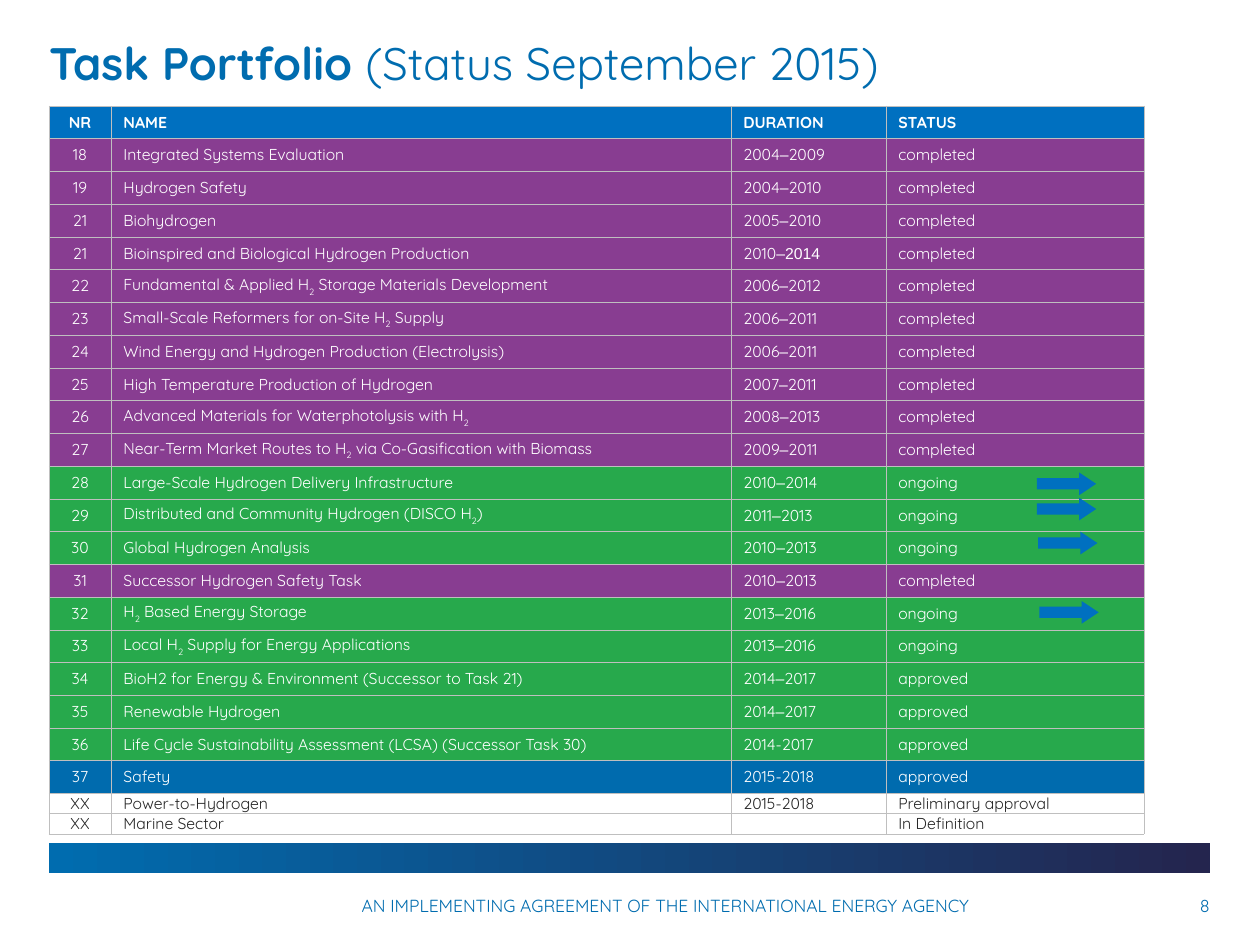
import pptx
import pptx.dml.color
import pptx.enum.shapes
import pptx.enum.text
import pptx.oxml.ns
import pptx.util
from dataclasses import dataclass
from lxml import etree

Inches, Pt = pptx.util.Inches, pptx.util.Pt
ALIGN = pptx.enum.text.PP_ALIGN
SHAPE = pptx.enum.shapes.MSO_SHAPE
qn = pptx.oxml.ns.qn


@dataclass(frozen=True)
class Theme:
    font: str = "Quicksand"
    dash_font: str = "Arial"
    brand: str = "006CAF"
    navy: str = "24254E"
    blue: str = "0070C0"
    purple: str = "883D91"
    green: str = "27A94C"
    safety: str = "006BAE"
    white: str = "FFFFFF"
    ink: str = "262626"
    border: str = "BFBFBF"
    title_size: int = 26
    table_size: int = 9
    footer_size: int = 10


T = Theme()

# In cell text, _ encloses a subscript and | encloses the dash font.
HEADER = ("NR", "NAME", "DURATION", "STATUS")
TASKS = [
    ("18", "Integrated Systems Evaluation", "2004|‒|2009", "completed"),
    ("19", "Hydrogen Safety", "2004|‒|2010", "completed"),
    ("21", "Biohydrogen", "2005|‒|2010", "completed"),
    ("21", "Bioinspired and Biological Hydrogen Production", "2010|‒2014|", "completed"),
    ("22", "Fundamental & Applied H_2_ Storage Materials Development", "2006|‒|2012", "completed"),
    ("23", "Small-Scale Reformers for on-Site H_2_ Supply", "2006|‒|2011", "completed"),
    ("24", "Wind Energy and Hydrogen Production (Electrolysis)", "2006|‒|2011", "completed"),
    ("25", "High Temperature Production of Hydrogen", "2007|‒|2011", "completed"),
    ("26", "Advanced Materials for Waterphotolysis with H_2_", "2008|‒|2013", "completed"),
    ("27", "Near-Term Market Routes to H_2_ via Co-Gasification with Biomass", "2009|‒|2011", "completed"),
    ("28", "Large-Scale Hydrogen Delivery Infrastructure", "2010|‒|2014", "ongoing"),
    ("29", "Distributed and Community Hydrogen (DISCO H_2_)", "2011|‒|2013", "ongoing"),
    ("30", "Global Hydrogen Analysis", "2010|‒|2013", "ongoing"),
    ("31", "Successor Hydrogen Safety Task", "2010|‒|2013", "completed"),
    ("32", "H_2_ Based Energy Storage", "2013|‒|2016", "ongoing"),
    ("33", "Local H_2_ Supply for Energy Applications", "2013|‒|2016", "ongoing"),
    ("34", "BioH2 for Energy & Environment (Successor to Task 21)", "2014|‒|2017", "approved"),
    ("35", "Renewable Hydrogen", "2014|‒|2017", "approved"),
    ("36", "Life Cycle Sustainability Assessment (LCSA) (Successor Task 30)", "2014-2017", "approved"),
    ("37", "Safety", "2015-2018", "approved"),
    ("XX", "Power-to-Hydrogen", "2015-2018", "Preliminary approval"),
    ("XX", "Marine Sector", "", "In Definition"),
]


def rgb(value):
    return pptx.dml.color.RGBColor.from_string(value)


def style(p, size, color, align=ALIGN.LEFT):
    p.alignment = align
    p.font.name, p.font.size = T.font, Pt(size)
    p.font.color.rgb = rgb(color)


def add_text(s, left, top, width, height, size, parts, align=ALIGN.LEFT):
    """Place one line made of (text, bold) parts."""
    tf = s.shapes.add_textbox(*map(Inches, (left, top, width, height))).text_frame
    tf.word_wrap = True
    tf.margin_left = tf.margin_right = tf.margin_top = tf.margin_bottom = 0
    p = tf.paragraphs[0]
    style(p, size, T.brand, align)
    for text, bold in parts:
        r = p.add_run()
        r.text, r.font.bold = text, bold


def add_marked_runs(p, text):
    for i, piece in enumerate(text.split("|")):
        for j, part in enumerate(piece.split("_")):
            if not part:
                continue
            r = p.add_run()
            r.text = part
            if i % 2:
                r.font.name = T.dash_font
            if j % 2:
                r._r.get_or_add_rPr().set("baseline", "-30000")


def add_borders(cell):
    """Draw the four cell borders ahead of the cell fill."""
    tc_pr = cell._tc.get_or_add_tcPr()
    for i, side in enumerate(("lnL", "lnR", "lnT", "lnB")):
        ln = etree.Element(qn(f"a:{side}"), w=str(Pt(0.25)))
        fill = etree.SubElement(ln, qn("a:solidFill"))
        etree.SubElement(fill, qn("a:srgbClr"), val=T.border)
        tc_pr.insert(i, ln)


def row_colors(task):
    """Return the fill and text colour that suit a task's number and status."""
    if task == HEADER:
        return T.blue, T.white
    number, _, _, status = task
    if number == "XX":
        return T.white, T.ink
    if number == "37":
        return T.safety, T.white
    return (T.purple if status == "completed" else T.green), T.white


def fill_cell(cell, text, fill, color, align, bold):
    cell.fill.solid()
    cell.fill.fore_color.rgb = rgb(fill)
    add_borders(cell)
    cell.margin_left = cell.margin_right = Inches(0.1)
    cell.margin_top = cell.margin_bottom = 0
    cell.vertical_anchor = pptx.enum.text.MSO_ANCHOR.MIDDLE
    p = cell.text_frame.paragraphs[0]
    style(p, T.table_size, color, align)
    p.font.bold = bold
    add_marked_runs(p, text)
    if not text:
        etree.SubElement(p._p, qn("a:endParaRPr"), sz=str(T.table_size * 100))


def add_task_table(s, left, top):
    rows = [HEADER] + TASKS
    widths = (0.49, 4.92, 1.23, 2.05)
    heights = [0.16 if row[0] == "XX" else 0.26 for row in rows]
    box = map(Inches, (left, top, sum(widths), sum(heights)))
    table = s.shapes.add_table(len(rows), len(widths), *box).table
    table.first_row = table.horz_banding = False
    for column, width in zip(table.columns, widths):
        column.width = Inches(width)
    for i, (row, height) in enumerate(zip(rows, heights)):
        table.rows[i].height = Inches(height)
        fill, color = row_colors(row)
        for j, text in enumerate(row):
            align = ALIGN.LEFT if j else ALIGN.CENTER
            fill_cell(table.cell(i, j), text, fill, color, align, row == HEADER)


def add_plain_shape(s, kind, left, top, width, height):
    sp = s.shapes.add_shape(kind, *map(Inches, (left, top, width, height)))
    sp.shadow.inherit = False
    sp.line.fill.background()
    return sp


def add_arrows(s, places):
    for left, top in places:
        sp = add_plain_shape(s, SHAPE.RIGHT_ARROW, left, top, 0.47, 0.18)
        sp.adjustments[0], sp.adjustments[1] = 0.5, 0.75
        sp.fill.solid()
        sp.fill.fore_color.rgb = rgb(T.blue)


def add_footer(s, left, top, width):
    bar = add_plain_shape(s, SHAPE.RECTANGLE, left, top, width, 0.24)
    bar.fill.gradient()
    bar.fill.gradient_angle = 0
    for stop, color in zip(bar.fill.gradient_stops, (T.brand, T.navy)):
        stop.color.rgb = rgb(color)
    text_top = top + 0.41
    add_text(s, left + 2.48, text_top, 5.02, 0.17, T.footer_size,
             [("AN IMPLEMENTING AGREEMENT OF THE INTERNATIONAL ENERGY AGENCY", False)])
    add_text(s, left + width - 0.39, text_top, 0.39, 0.17, T.footer_size,
             [("8", False)], ALIGN.RIGHT)


prs = pptx.Presentation()
prs.slide_width, prs.slide_height = Inches(10), Inches(7.5)
s = prs.slides.add_slide(prs.slide_layouts[6])
add_footer(s, 0.39, 6.69, 9.21)
add_text(s, 0.39, 0.28, 9.21, 0.71, T.title_size,
         [("Task Portfolio ", True), ("(Status September 2015)", False)])
add_task_table(s, 0.39, 0.84)
add_arrows(s, [(8.23, 3.75), (8.23, 3.95), (8.24, 4.22), (8.25, 4.77)])
prs.save("out.pptx")
